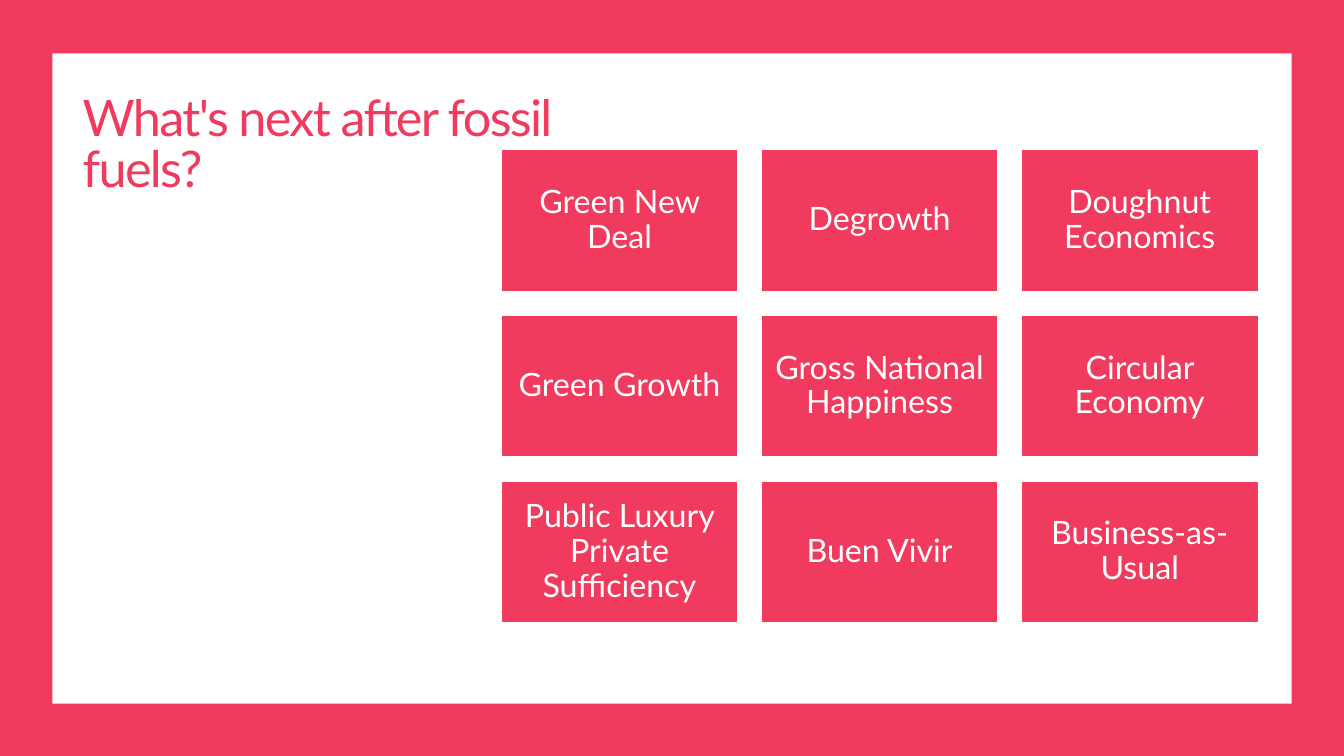
from pptx import Presentation
from pptx.dml.color import RGBColor
from pptx.enum import shapes, text
from pptx.util import Inches, Pt

PINK = RGBColor(0xF0, 0x3B, 0x5E)
WHITE = RGBColor(0xFF, 0xFF, 0xFF)
FONT = "Lato"

IDEAS = [
    ["Green New Deal", "Degrowth", "Doughnut Economics"],
    ["Green Growth", "Gross National Happiness", "Circular Economy"],
    ["Public Luxury Private Sufficiency", "Buen Vivir", "Business-as-Usual"],
]
GRID_LEFT, GRID_TOP = 4.97, 1.48
CARD_WIDTH, CARD_HEIGHT = 2.35, 1.41
COLUMN_STEP, ROW_STEP = 2.58, 1.645


def add_rectangle(left, top, width, height, color):
    shape = slide.shapes.add_shape(
        shapes.MSO_SHAPE.RECTANGLE,
        Inches(left), Inches(top), Inches(width), Inches(height),
    )
    shape.shadow.inherit = False
    shape.fill.solid()
    shape.fill.fore_color.rgb = color
    shape.line.fill.background()
    return shape


def write_text(shape, words, size, color, alignment, line_spacing):
    frame = shape.text_frame
    frame.word_wrap = True
    frame.auto_size = text.MSO_AUTO_SIZE.NONE
    frame.vertical_anchor = text.MSO_ANCHOR.MIDDLE
    paragraph = frame.paragraphs[0]
    paragraph.alignment = alignment
    paragraph.line_spacing = line_spacing
    run = paragraph.add_run()
    run.text = words
    run.font.name = FONT
    run.font.size = Pt(size)
    run.font.color.rgb = color
    return run


presentation = Presentation()
presentation.slide_width = Inches(13.33)
presentation.slide_height = Inches(7.5)
slide = presentation.slides.add_slide(presentation.slide_layouts[5])

# Pink frame around a white panel
add_rectangle(0, 0, 13.33, 7.5, PINK)
add_rectangle(0.52, 0.53, 12.29, 6.45, WHITE)

# Title, brought in front of the panel
title = slide.shapes.title
title.element.getparent().append(title.element)
title.left, title.top = Inches(0.72), Inches(0.55)
title.width, title.height = Inches(4.99), Inches(1.81)
title_run = write_text(
    title, "What's next after fossil fuels?", 36, PINK, text.PP_ALIGN.LEFT, 0.85
)
title_run.font._element.set("spc", "-120")

# Grid of ideas
for row, ideas in enumerate(IDEAS):
    for column, idea in enumerate(ideas):
        card = add_rectangle(
            GRID_LEFT + column * COLUMN_STEP, GRID_TOP + row * ROW_STEP,
            CARD_WIDTH, CARD_HEIGHT, PINK,
        )
        card.line.color.rgb = WHITE
        card.line.width = Pt(1)
        frame = card.text_frame
        frame.margin_left = frame.margin_right = Inches(0.1)
        frame.margin_top = frame.margin_bottom = Inches(0.1)
        write_text(card, idea, 23, WHITE, text.PP_ALIGN.CENTER, 0.9)

presentation.save("out.pptx")
